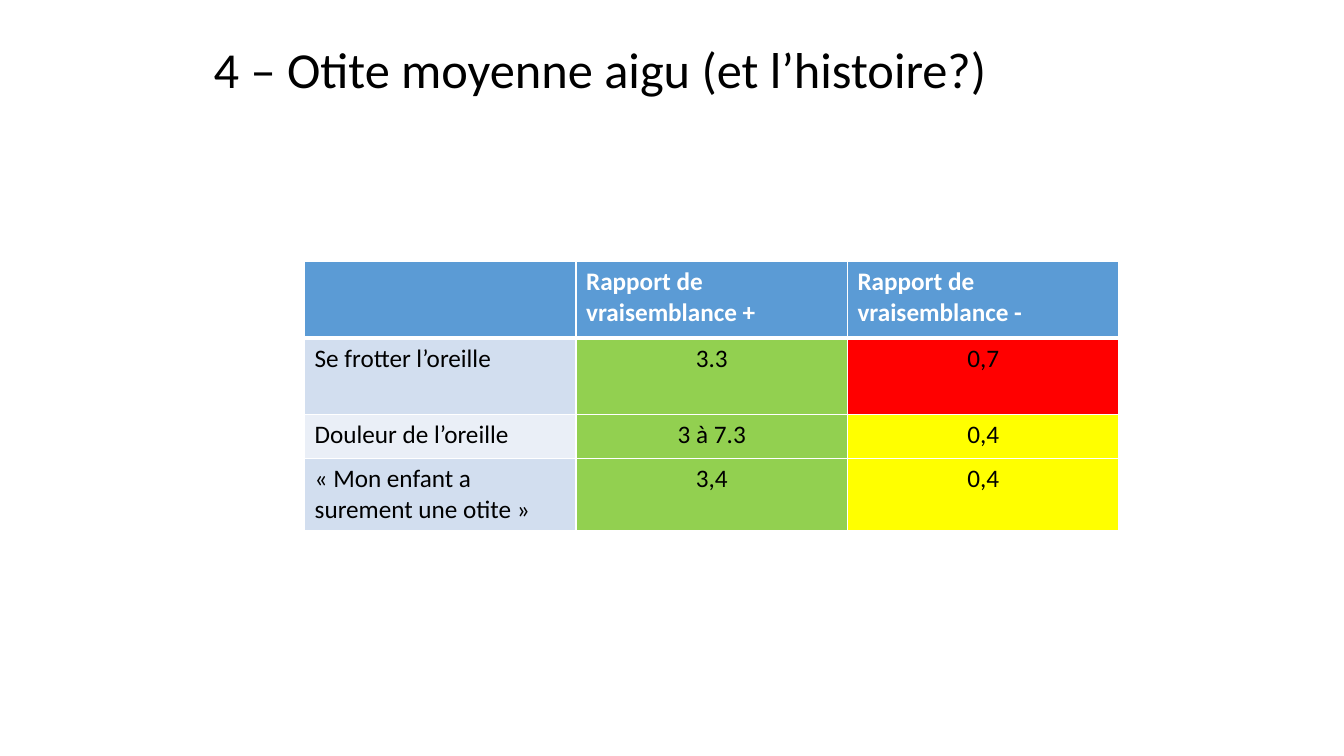
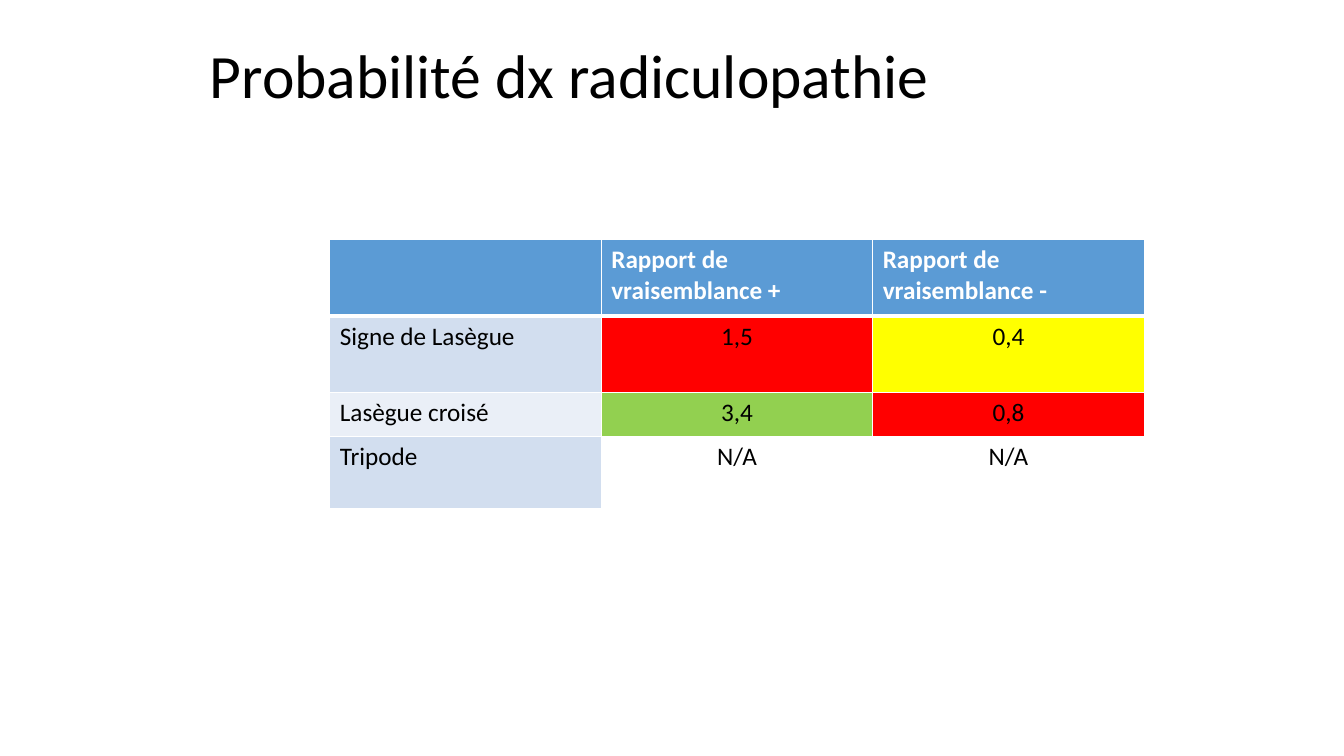
from lxml.etree import SubElement
from pptx import Presentation
from pptx.dml.color import RGBColor
from pptx.enum.text import MSO_ANCHOR as Anchor, MSO_AUTO_SIZE as AutoSize, PP_ALIGN as Align
from pptx.oxml.ns import qn
from pptx.util import Pt

BLACK = RGBColor(0x00, 0x00, 0x00)
WHITE = RGBColor(0xFF, 0xFF, 0xFF)
BLUE = RGBColor(0x5B, 0x9B, 0xD5)
BAND_DARK = RGBColor(0xD2, 0xDE, 0xEF)
BAND_LIGHT = RGBColor(0xEA, 0xEF, 0xF7)
GREEN = RGBColor(0x92, 0xD0, 0x50)
YELLOW = RGBColor(0xFF, 0xFF, 0x00)
RED = RGBColor(0xFF, 0x00, 0x00)

COLUMN_WIDTH = 193.9
ROW_HEIGHTS = [54.6, 54.6, 31.6, 51]
HEADINGS = [("", BLUE), ("Rapport de vraisemblance +", BLUE), ("Rapport de vraisemblance -", BLUE)]
TITLE_FRAME = {"vertical_anchor": Anchor.TOP, "auto_size": AutoSize.NONE, "word_wrap": True}
TITLE_PARAGRAPH = {"alignment": Align.LEFT, "line_spacing": 0.9}

PAGES = [
    {
        "title": "4 – Otite moyenne aigu (et l’histoire?)",
        "title_size": 36,
        "title_box": (145.4, 28.8, 749, 104.4),
        "table_corner": (217.6, 186.8),
        "findings": [
            [("Se frotter l’oreille", BAND_DARK), ("3.3", GREEN), ("0,7", RED)],
            [("Douleur de l’oreille", BAND_LIGHT), ("3 à 7.3", GREEN), ("0,4", YELLOW)],
            [("« Mon enfant a surement une otite »", BAND_DARK), ("3,4", GREEN), ("0,4", YELLOW)],
        ],
    },
    {
        "title": "Probabilité dx radiculopathie",
        "title_size": 44,
        "title_box": (142.6, 28.8, 751, 104.4),
        "table_corner": (235.6, 171.2),
        "findings": [
            [("Signe de Lasègue", BAND_DARK), ("1,5", RED), ("0,4", YELLOW)],
            [("Lasègue croisé", BAND_LIGHT), ("3,4", GREEN), ("0,8", RED)],
            [("Tripode", BAND_DARK), ("N/A", None), ("N/A", None)],
        ],
    },
]


def apply_format(target, values):
    for attribute, value in values.items():
        setattr(target, attribute, value)


def add_borders(cell, widths):
    properties = cell._tc.get_or_add_tcPr()
    for side, width in widths.items():
        line = SubElement(properties, qn(f"a:ln{side}"), w=str(Pt(width)))
        fill = SubElement(line, qn("a:solidFill"))
        SubElement(fill, qn("a:srgbClr"), val=str(WHITE))


deck = Presentation()
deck.slide_width, deck.slide_height = Pt(960), Pt(540)

for page in PAGES:
    slide = deck.slides.add_slide(deck.slide_layouts[5])
    title = slide.shapes.title
    apply_format(title, dict(zip(("left", "top", "width", "height"), map(Pt, page["title_box"]))))
    title.text_frame.text = page["title"]
    apply_format(title.text_frame, TITLE_FRAME)
    heading = title.text_frame.paragraphs[0]
    apply_format(heading, TITLE_PARAGRAPH)
    apply_format(heading.font, {"name": "Calibri", "size": Pt(page["title_size"])})
    heading.font.color.rgb = BLACK

    rows = [HEADINGS] + page["findings"]
    left, top = page["table_corner"]
    ratios = slide.shapes.add_table(
        len(rows), len(HEADINGS), Pt(left), Pt(top),
        Pt(COLUMN_WIDTH * len(HEADINGS)), Pt(sum(ROW_HEIGHTS)),
    ).table
    for column in ratios.columns:
        column.width = Pt(COLUMN_WIDTH)

    for row_index, (row, height) in enumerate(zip(rows, ROW_HEIGHTS)):
        ratios.rows[row_index].height = Pt(height)
        is_header = row_index == 0
        borders = {"L": 1, "R": 1, "T": 3 if row_index == 1 else 1, "B": 3 if is_header else 1}
        for column_index, (text, colour) in enumerate(row):
            cell = ratios.cell(row_index, column_index)
            add_borders(cell, borders)
            if colour is None:
                cell.fill.background()
            else:
                cell.fill.solid()
                cell.fill.fore_color.rgb = colour
            cell.text = text
            entry = cell.text_frame.paragraphs[0]
            entry.alignment = Align.LEFT if is_header or column_index == 0 else Align.CENTER
            apply_format(entry.font, {"name": "Calibri", "size": Pt(18), "bold": is_header})
            entry.font.color.rgb = WHITE if is_header else BLACK

deck.save("out.pptx")
